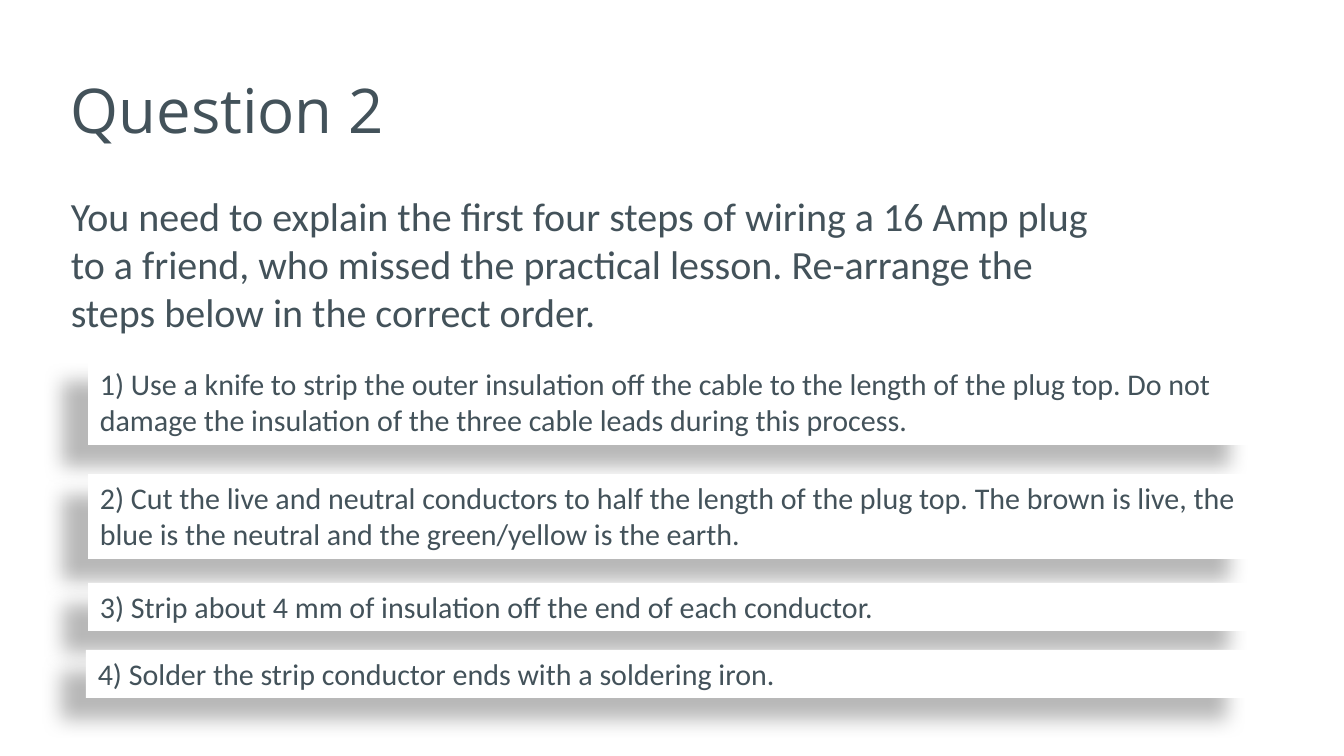
"""Build the Question 2 slide: order the steps of wiring a 16 Amp plug."""
import dataclasses

import lxml.etree
import pptx
import pptx.dml.color
import pptx.enum.shapes
import pptx.enum.text
import pptx.oxml.ns
import pptx.util

PX = 914400 // 120
INK = "43525A"
WHITE = "FFFFFF"


@dataclasses.dataclass(frozen=True)
class Label:
    text: str
    left: int
    top: int
    width: int
    height: int
    size: int
    font: str = "Calibri"
    spacing: float = 1.0
    anchor: pptx.enum.text.MSO_ANCHOR = pptx.enum.text.MSO_ANCHOR.TOP


def step(text: str, top: int, height: int, left: int = 88) -> Label:
    """Describe one answer card."""
    return Label(text, left, top, 1165, height, 18)


HEADINGS = [
    Label("Question 2", 59, 41, 1159, 146, 37, "Open Sans", 0.9,
          pptx.enum.text.MSO_ANCHOR.MIDDLE),
    Label("You need to explain the first four steps of wiring a 16 Amp plug to a friend, "
          "who missed the practical lesson. Re-arrange the steps below in the correct order.",
          59, 186, 1055, 160, 24),
]
STEPS = [
    step("1) Use a knife to strip the outer insulation off the cable to the length of the plug top. "
         "Do not damage the insulation of the three cable leads during this process.", 360, 85),
    step("2) Cut the live and neutral conductors to half the length of the plug top. "
         "The brown is live, the blue is the neutral and the green/yellow is the earth.", 474, 85),
    step("3) Strip about 4 mm of insulation off the end of each conductor.", 583, 48),
    step("4) Solder the strip conductor ends with a soldering iron.", 650, 48, left=86),
]


def px(length: int) -> pptx.util.Emu:
    """Turn pixels into EMU."""
    return pptx.util.Emu(length * PX)


def colour(value: str) -> pptx.dml.color.RGBColor:
    """Turn a hex string into a colour."""
    return pptx.dml.color.RGBColor.from_string(value)


def bounds(label: Label) -> list[pptx.util.Emu]:
    """Give left, top, width and height in EMU."""
    return [px(side) for side in (label.left, label.top, label.width, label.height)]


def write(box: pptx.shapes.autoshape.Shape, label: Label) -> None:
    """Put the label's text into a box."""
    frame = box.text_frame
    frame.word_wrap = True
    frame.vertical_anchor = label.anchor
    para = frame.paragraphs[0]
    para.text = label.text
    para.alignment = pptx.enum.text.PP_ALIGN.LEFT
    para.line_spacing = label.spacing
    para.font.name = label.font
    para.font.size = pptx.util.Pt(label.size)
    para.font.color.rgb = colour(INK)


def add_shadow(box: pptx.shapes.autoshape.Shape) -> None:
    """Cast a soft shadow to the lower left."""
    qn = pptx.oxml.ns.qn
    box.shadow.inherit = False
    effects = box._element.spPr.find(qn("a:effectLst"))
    shadow = lxml.etree.SubElement(
        effects, qn("a:outerShdw"), blurRad=str(pptx.util.Pt(11.8)),
        dist=str(pptx.util.Pt(19.7)), dir=str(141 * 60000), algn="ctr", rotWithShape="0")
    tint = lxml.etree.SubElement(shadow, qn("a:srgbClr"), val="000000")
    lxml.etree.SubElement(tint, qn("a:alpha"), val="28000")


def main() -> None:
    """Draw the slide and save it."""
    deck = pptx.Presentation()
    deck.slide_width, deck.slide_height = px(1344), px(756)
    page = deck.slides.add_slide(deck.slide_layouts[6])
    for heading in HEADINGS:
        write(page.shapes.add_textbox(*bounds(heading)), heading)
    for card in STEPS:
        box = page.shapes.add_shape(pptx.enum.shapes.MSO_SHAPE.RECTANGLE, *bounds(card))
        box.fill.solid()
        box.fill.fore_color.rgb = colour(WHITE)
        box.line.fill.background()
        add_shadow(box)
        write(box, card)
    deck.save("out.pptx")


if __name__ == "__main__":
    main()
